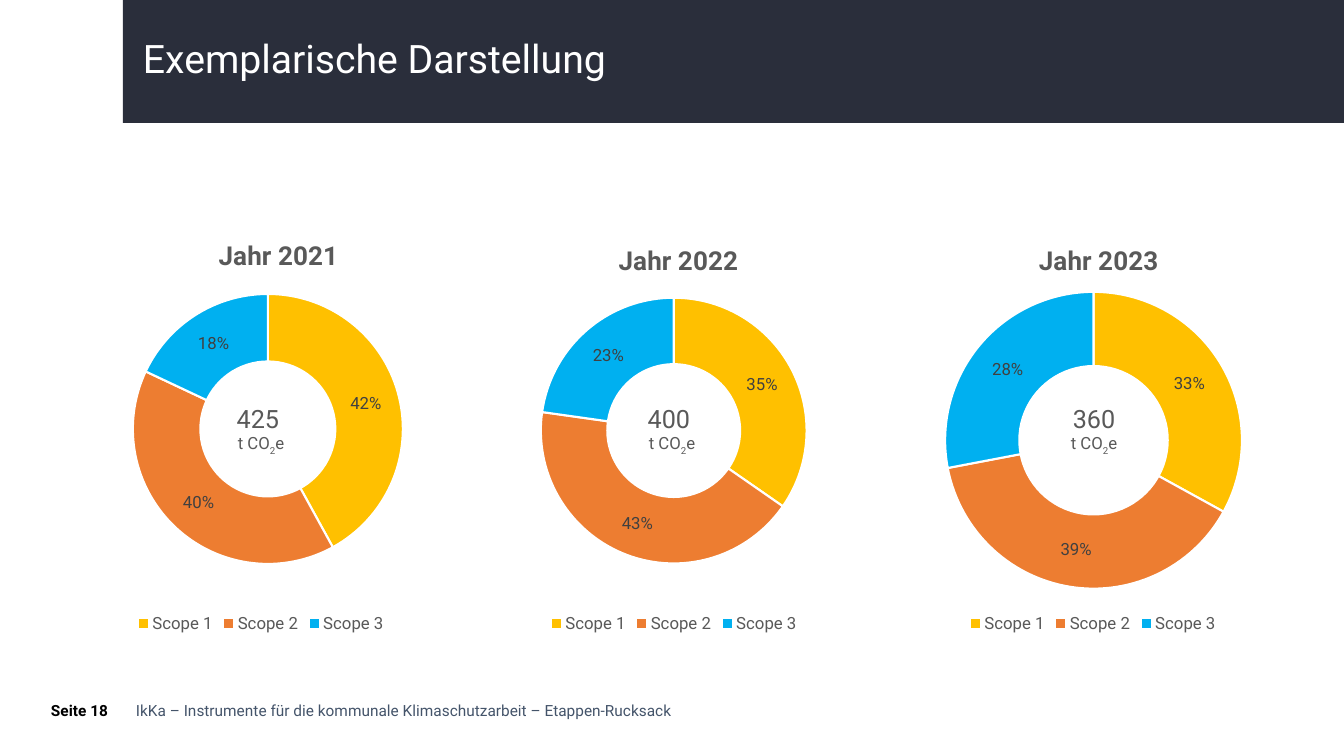
from pptx import Presentation
from pptx.chart.data import CategoryChartData as ChartData
from pptx.dml.color import RGBColor as Rgb
from pptx.enum.chart import XL_CHART_TYPE as Kind, XL_LEGEND_POSITION as LegendSide
from pptx.enum.shapes import MSO_SHAPE as Preset
from pptx.enum.text import MSO_ANCHOR as Anchor, PP_ALIGN as Align
from pptx.oxml import parse_xml
from pptx.oxml.ns import nsdecls
from pptx.util import Pt

COLORS = {
    "band": "2A2E3B", "white": "FFFFFF", "footer": "44546A", "black": "000000",
    "text": "595959", "label": "404040",
    "Scope 1": "FFC000", "Scope 2": "ED7D31", "Scope 3": "00B0F0",
}
FONT = "Roboto"
EMU_PER_PX = 914400 / 100.8
PAGE_SIZE = (1344, 756)
BAND = (123, 0, 1221, 123)
SCOPES = ["Scope 1", "Scope 2", "Scope 3"]
CHART_TOP, CHART_SIDE = 218, 420
TOTAL_TOP, TOTAL_WIDTH, TOTAL_HEIGHT = 398, 186, 62

FORMATS = {
    "title": {"size": 28, "color": "white"},
    "footer": {"size": 11, "color": "footer"},
    "page": {"size": 11, "color": "black", "bold": True},
    "heading": {"size": 18.6, "color": "text"},
    "total": {"size": 18, "color": "text"},
    "unit": {"size": 12, "color": "text"},
    "legend": {"size": 12, "color": "text"},
    "label": {"size": 12, "color": "label"},
    "chart": {"size": 10, "color": "black"},
}
LINES = [
    ("Exemplarische Darstellung", "title", (133, 35, 1109, 62), (10, 5), 0.9),
    ("IkKa – Instrumente für die kommunale Klimaschutzarbeit – Etappen-Rucksack",
     "footer", (136, 701, 561, 19), (0, 0), 1),
    ("Seite 18", "page", (51, 701, 74, 24), (0, 0), 1),
]
YEARS = [
    {"heading": "Jahr 2021", "shares": (42, 40, 18), "total": "425 ", "left": 51,
     "heading_at": (214, 234), "ring": (133, 294, 270), "total_left": 168},
    {"heading": "Jahr 2022", "shares": (35, 43, 23), "total": "400 ", "left": 464,
     "heading_at": (614, 238), "ring": (541, 298, 266), "total_left": 579},
    {"heading": "Jahr 2023", "shares": (33, 39, 28), "total": "360", "left": 883,
     "heading_at": (1034, 238), "ring": (945, 292, 297), "total_left": 1001},
]


def px(length):
    return round(length * EMU_PER_PX)


def color(name):
    return Rgb.from_string(COLORS[name])


def style(font, name):
    values = dict(FORMATS[name], name=FONT)
    font.color.rgb = color(values.pop("color"))
    values["size"] = Pt(values["size"])
    for key, value in values.items():
        setattr(font, key, value)


def add_span(para, text, name):
    span = para.add_run()
    span.text = text
    style(span.font, name)
    return span


def add_box(page, place, insets):
    frame = page.shapes.add_textbox(*map(px, place)).text_frame
    across, down = map(px, insets)
    values = {"word_wrap": True, "vertical_anchor": Anchor.TOP,
              "margin_left": across, "margin_right": across,
              "margin_top": down, "margin_bottom": down}
    for key, value in values.items():
        setattr(frame, key, value)
    return frame.paragraphs[0]


def set_layout(parent, index, left, top, side=None):
    for layout in parent.xpath("c:layout"):
        parent.remove(layout)
    parts = {"xMode": "edge", "yMode": "edge"}
    if side:
        parts = {"layoutTarget": "inner", **parts}
    parts.update(x=round(left / CHART_SIDE, 3), y=round(top / CHART_SIDE, 3))
    if side:
        parts.update(w=round(side / CHART_SIDE, 3), h=round(side / CHART_SIDE, 3))
    inner = "".join(f'<c:{key} val="{value}"/>' for key, value in parts.items())
    parent.insert(index, parse_xml(
        f'<c:layout {nsdecls("c")}><c:manualLayout>{inner}</c:manualLayout></c:layout>'))


def add_ring(page, year):
    data = ChartData()
    data.categories = SCOPES
    data.add_series("Series 1", year["shares"])
    place = map(px, (year["left"], CHART_TOP, CHART_SIDE, CHART_SIDE))
    chart = page.shapes.add_chart(Kind.DOUGHNUT, *place, data).chart
    style(chart.font, "chart")

    chart.has_title = True
    add_span(chart.chart_title.text_frame.paragraphs[0], year["heading"], "heading")
    chart.has_legend = True
    chart.legend.position = LegendSide.BOTTOM
    chart.legend.include_in_layout = False
    style(chart.legend.font, "legend")

    plot = chart.plots[0]
    plot.vary_by_categories = True
    plot.has_data_labels = True
    labels = plot.data_labels
    values = {"show_percentage": True, "show_value": False,
              "number_format": "0%", "number_format_is_linked": False}
    for key, value in values.items():
        setattr(labels, key, value)
    style(labels.font, "label")
    for index, scope in enumerate(SCOPES):
        form = plot.series[0].points[index].format
        form.fill.solid()
        form.fill.fore_color.rgb = color(scope)
        form.line.color.rgb = color("white")
        form.line.width = Pt(1.5)

    root = chart.element
    for hole in root.xpath(".//c:holeSize"):
        hole.set("val", "60")
    left, top = year["heading_at"]
    set_layout(root.xpath("c:chart/c:title")[0], 1, left - year["left"], top - CHART_TOP)
    left, top, side = year["ring"]
    set_layout(root.xpath("c:chart/c:plotArea")[0], 0,
               left - year["left"], top - CHART_TOP, side)


def add_total(page, year):
    para = add_box(page, (year["total_left"], TOTAL_TOP, TOTAL_WIDTH, TOTAL_HEIGHT), (10, 5))
    para.alignment = Align.CENTER
    add_span(para, year["total"], "total")
    para.add_line_break()
    add_span(para, "t CO", "unit")
    subscript = add_span(para, "2", "unit")
    subscript.font._element.set("baseline", "-25000")
    add_span(para, "e", "unit")


def main():
    deck = Presentation()
    deck.slide_width, deck.slide_height = map(px, PAGE_SIZE)
    page = deck.slides.add_slide(deck.slide_layouts[6])
    band = page.shapes.add_shape(Preset.RECTANGLE, *map(px, BAND))
    band.shadow.inherit = False
    band.fill.solid()
    band.fill.fore_color.rgb = color("band")
    band.line.fill.background()
    for text, name, place, insets, spacing in LINES:
        para = add_box(page, place, insets)
        para.line_spacing = spacing
        add_span(para, text, name)
    for year in YEARS:
        add_ring(page, year)
        add_total(page, year)
    deck.save("out.pptx")


if __name__ == "__main__":
    main()
